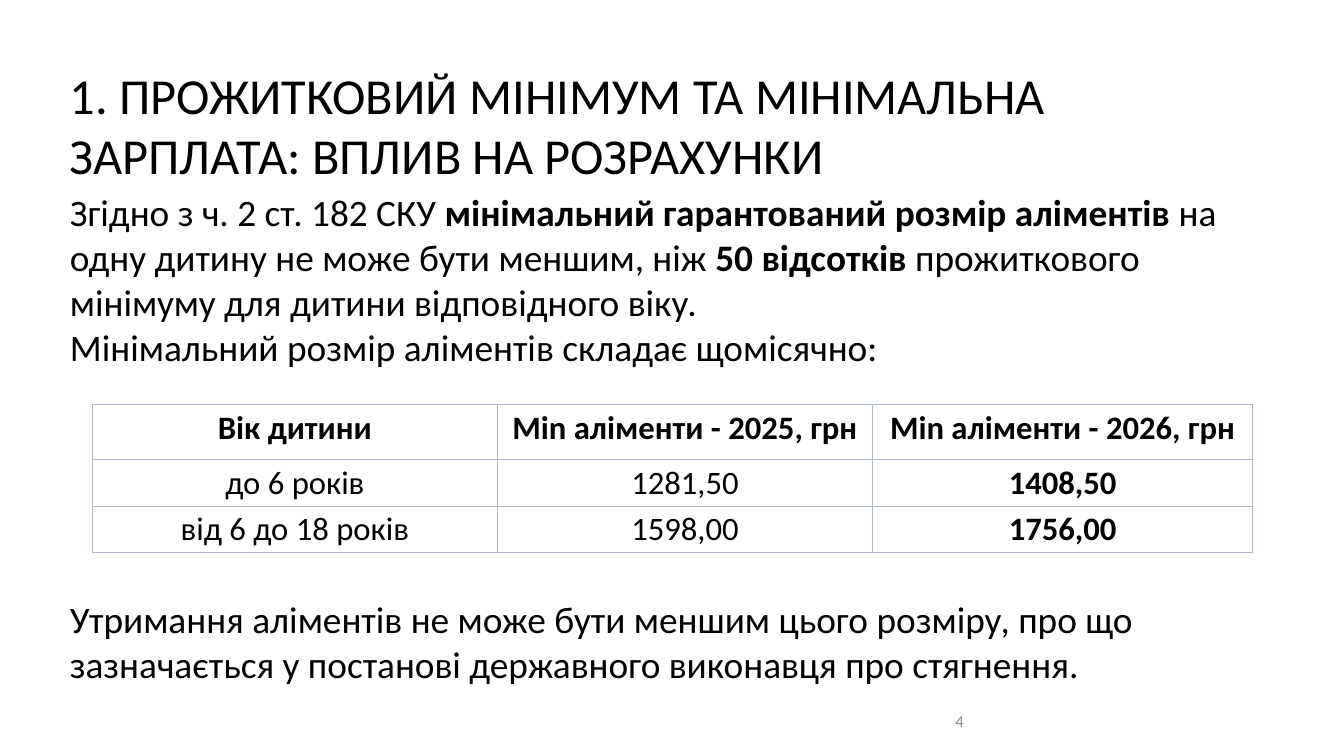
from lxml.etree import SubElement
from pptx import Presentation
from pptx.dml.color import RGBColor
from pptx.enum.text import MSO_ANCHOR, MSO_AUTO_SIZE, PP_ALIGN
from pptx.oxml.ns import qn
from pptx.util import Inches, Pt

FONT = "Calibri"
COLORS = {"text": "000000", "number": "8C8C8C", "cell": "FFFFFF", "border": "ADB9CA"}

TITLE = "1. ПРОЖИТКОВИЙ МІНІМУМ ТА МІНІМАЛЬНА ЗАРПЛАТА: ВПЛИВ НА РОЗРАХУНКИ"
BODY = [
    [
        ("Згідно з ч. 2 ст. 182 СКУ ", False),
        ("мінімальний гарантований розмір аліментів", True),
        (" на одну дитину не може бути меншим, ніж ", False),
        ("50 відсотків", True),
        (" прожиткового мінімуму для дитини відповідного віку.", False),
    ],
    [("Мінімальний розмір аліментів складає щомісячно:", False)],
    [("Утримання аліментів не може бути меншим цього розміру, про що "
      "зазначається у постанові державного виконавця про стягнення.", False)],
]
TABLE_GAP = Pt(244)
ROWS = [
    ("Вік дитини", "Min аліменти - 2025, грн", "Min аліменти - 2026, грн"),
    ("до 6 років", "1281,50", "1408,50"),
    ("від 6 до 18 років", "1598,00", "1756,00"),
]
COL_WIDTHS = (6.02, 5.59, 5.65)
ROW_HEIGHTS = (0.82, 0.69, 0.69)


def add_run(p, text, size, color="text", bold=False):
    r = p.add_run()
    r.text = text
    r.font.name = FONT
    r.font.size = Pt(size)
    r.font.bold = bold
    r.font.color.rgb = RGBColor.from_string(COLORS[color])


def place(sp, box, anchor=MSO_ANCHOR.TOP):
    sp.left, sp.top, sp.width, sp.height = (Inches(v) for v in box)
    tf = sp.text_frame
    tf.word_wrap = True
    tf.auto_size = MSO_AUTO_SIZE.NONE
    tf.vertical_anchor = anchor
    return tf


def fill_title(slide, box):
    p = place(slide.shapes.title, box).paragraphs[0]
    p.alignment = PP_ALIGN.LEFT
    add_run(p, TITLE, 54)


def fill_body(slide, box):
    tf = place(slide.placeholders[1], box)
    for i, runs in enumerate(BODY):
        p = tf.add_paragraph() if i else tf.paragraphs[0]
        pPr = p._p.get_or_add_pPr()
        pPr.set("marL", "0")
        pPr.set("indent", "0")
        SubElement(pPr, qn("a:buNone"))
        p.space_before = TABLE_GAP if i == len(BODY) - 1 else Pt(0)
        for text, bold in runs:
            add_run(p, text, 40, bold=bold)


def set_borders(cell):
    tcPr = cell._tc.get_or_add_tcPr()
    for i, side in enumerate(("lnL", "lnR", "lnT", "lnB")):
        ln = tcPr.makeelement(qn(f"a:{side}"), {"w": str(Pt(1))})
        fill = SubElement(ln, qn("a:solidFill"))
        SubElement(fill, qn("a:srgbClr"), val=COLORS["border"])
        tcPr.insert(i, ln)


def add_payments_table(slide, box):
    frame = slide.shapes.add_table(len(ROWS), len(COL_WIDTHS), *(Inches(v) for v in box))
    table = frame.table
    table.first_row = table.horz_banding = False
    for col, width in zip(table.columns, COL_WIDTHS):
        col.width = Inches(width)
    for row, height in zip(table.rows, ROW_HEIGHTS):
        row.height = Inches(height)
    for i, values in enumerate(ROWS):
        for j, value in enumerate(values):
            cell = table.cell(i, j)
            cell.fill.solid()
            cell.fill.fore_color.rgb = RGBColor.from_string(COLORS["cell"])
            set_borders(cell)
            p = cell.text_frame.paragraphs[0]
            p.alignment = PP_ALIGN.CENTER
            add_run(p, value, 35, bold=i == 0 or j == 2)


def add_slide_number(slide, box):
    sp = slide.shapes.add_textbox(*(Inches(v) for v in box))
    tf = place(sp, box, MSO_ANCHOR.MIDDLE)
    add_run(tf.paragraphs[0], "4", 18, "number")


def main():
    prs = Presentation()
    prs.slide_width, prs.slide_height = Inches(20), Inches(11.25)
    slide = prs.slides.add_slide(prs.slide_layouts[1])
    fill_title(slide, (0.94, 0.9, 18.11, 1.92))
    add_slide_number(slide, (14.12, 10.43, 4.5, 0.6))
    fill_body(slide, (0.94, 2.77, 18.07, 8.26))
    add_payments_table(slide, (1.38, 6.02, sum(COL_WIDTHS), sum(ROW_HEIGHTS)))
    prs.save("out.pptx")


if __name__ == "__main__":
    main()
